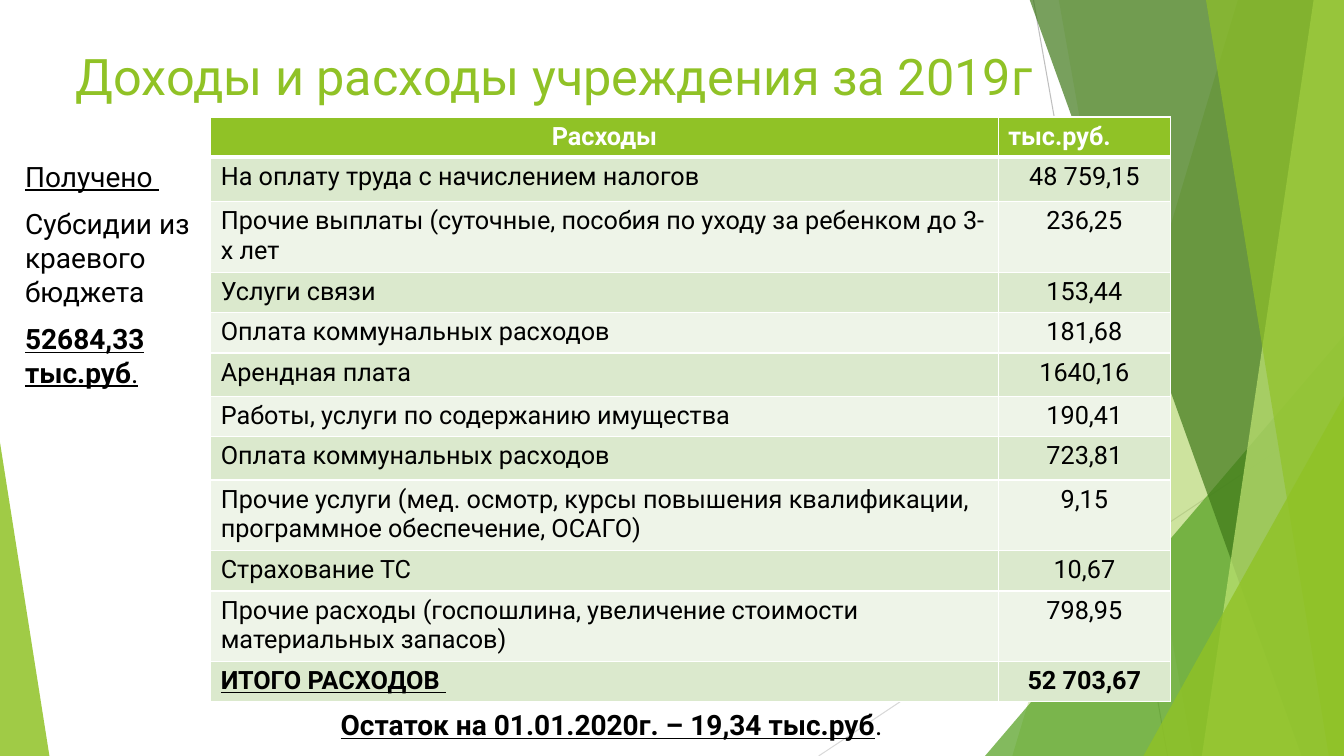
from lxml import etree
from pptx import Presentation
from pptx.dml.color import RGBColor
from pptx.enum.shapes import MSO_CONNECTOR, MSO_SHAPE
from pptx.enum.text import PP_ALIGN
from pptx.oxml import parse_xml
from pptx.oxml.ns import nsdecls, qn
from pptx.util import Inches, Pt

GREEN = "90C226"


def rgb(color):
    return RGBColor.from_string(color)


def add_text(p, text, size=20, color="000000", bold=False, underline=False,
             align=PP_ALIGN.LEFT):
    p.alignment = align
    r = p.add_run()
    r.text = text
    r.font.name = "Roboto"
    r.font.size = Pt(size)
    r.font.color.rgb = rgb(color)
    r.font.bold = bold
    r.font.underline = underline


prs = Presentation()
prs.slide_width, prs.slide_height = Inches(13.33), Inches(7.5)
s = prs.slides.add_slide(prs.slide_layouts[6])

# Thin background lines
for x1, y1, x2, y2, color in [(10.25, 0, 11.58, 7.5, "BFBFBF"),
                              (13.33, 4.03, 8.12, 7.5, "D9D9D9")]:
    line = s.shapes.add_connector(MSO_CONNECTOR.STRAIGHT, Inches(x1), Inches(y1),
                                  Inches(x2), Inches(y2))
    line.line.color.rgb = rgb(color)
    line.line.width = Pt(0.75)
    etree.SubElement(line._element.spPr, qn("a:effectLst"))

# Translucent facets: bands give top and bottom x of their left edge,
# triangles give left, top, width, height and apex position
facets = [
    ("band", (12.28, 10.04), GREEN, 30),
    ("band", (10.5, 11.83), GREEN, 20),
    ("triangle", (9.77, 3.33, 3.56, 4.17, 1), "54A021", 72),
    ("band", (10.21, 12.91), "3F7819", 70),
    ("band", (13.03, 11.92), "C0E474", 70),
    ("band", (11.96, 13.18), GREEN, 65),
    ("triangle", (11.34, 3.93, 1.99, 3.57, 1), GREEN, 80),
    ("triangle", (0, 4.39, 0.49, 3.11, 0), GREEN, 85),
]
for kind, place, color, opacity in facets:
    if kind == "band":
        top_x, bottom_x = place
        outline = s.shapes.build_freeform(Inches(top_x), Inches(-0.01))
        outline.add_line_segments([(Inches(x), Inches(y)) for x, y in
                                   [(13.33, -0.01), (13.33, 7.5), (bottom_x, 7.5)]])
        sp = outline.convert_to_shape()
    else:
        sp = s.shapes.add_shape(MSO_SHAPE.ISOSCELES_TRIANGLE,
                                *[Inches(v) for v in place[:4]])
        sp.adjustments[0] = place[4]
    sp.shadow.inherit = False
    sp.line.fill.background()
    sp.fill.solid()
    sp.fill.fore_color.rgb = rgb(color)
    tint = sp._element.spPr.find(qn("a:solidFill"))[0]
    etree.SubElement(tint, qn("a:alpha"), val=str(opacity * 1000))

# Title, income note and closing balance: place, then runs by paragraph
texts = [
    ((0.65, 0.4, 9.73, 0.86),
     [[("Доходы и расходы учреждения за 2019г", dict(size=36, color=GREEN))]]),
    ((0.15, 1.53, 2.19, 5.08),
     [[("Получено ", dict(underline=True))],
      [("Субсидии из краевого бюджета", {})],
      [("52684,33 тыс.руб", dict(bold=True, underline=True)),
       (".", dict(underline=True))]]),
    ((1.92, 6.97, 8.29, 0.44),
     [[("Остаток на 01.01.2020г. – 19,34 тыс.руб",
        dict(bold=True, underline=True, align=PP_ALIGN.CENTER)),
       (".", dict(align=PP_ALIGN.CENTER))]]),
]
for place, paragraphs in texts:
    tf = s.shapes.add_textbox(*[Inches(v) for v in place]).text_frame
    tf.word_wrap = True
    for i, runs in enumerate(paragraphs):
        p = tf.add_paragraph() if i else tf.paragraphs[0]
        if i:
            p.space_before = Pt(10)
        for text, style in runs:
            add_text(p, text, **style)

# Expense table: name, amount, row height
expenses = [
    ("Расходы", "тыс.руб.", 0.39),
    ("На оплату труда с начислением налогов", "48 759,15", 0.44),
    ("Прочие выплаты (суточные, пособия по уходу за ребенком до 3-х лет", "236,25", 0.69),
    ("Услуги связи", "153,44", 0.4),
    ("Оплата коммунальных расходов", "181,68", 0.4),
    ("Арендная плата", "1640,16", 0.43),
    ("Работы, услуги по содержанию имущества", "190,41", 0.4),
    ("Оплата коммунальных расходов", "723,81", 0.43),
    ("Прочие услуги (мед. осмотр, курсы повышения квалификации, "
     "программное обеспечение, ОСАГО)", "9,15", 0.7),
    ("Страхование ТС", "10,67", 0.4),
    ("Прочие расходы (госпошлина, увеличение стоимости материальных запасов)",
     "798,95", 0.69),
    ("ИТОГО РАСХОДОВ ", "52 703,67", 0.4),
]
last = len(expenses) - 1
table = s.shapes.add_table(len(expenses), 2, Inches(2.09), Inches(1.16), Inches(9.52),
                           Inches(sum(row[2] for row in expenses))).table
table.columns[0].width, table.columns[1].width = Inches(7.81), Inches(1.71)
for i, (name, amount, height) in enumerate(expenses):
    table.rows[i].height = Inches(height)
    for j, text in enumerate((name, amount)):
        cell = table.cell(i, j)
        centred = (i == 0) != (j == 1)
        add_text(cell.text_frame.paragraphs[0], text, size=18,
                 color="000000" if i else "FFFFFF", bold=i in (0, last),
                 underline=i == last and j == 0,
                 align=PP_ALIGN.CENTER if centred else PP_ALIGN.LEFT)
        # White cell borders, thicker under the header
        tcPr = cell._tc.get_or_add_tcPr()
        for side in "LRTB":
            thick = (i, side) in ((0, "B"), (1, "T"))
            tcPr.append(parse_xml(
                f'<a:ln{side} {nsdecls("a")} w="{Pt(3 if thick else 1)}"><a:solidFill>'
                f'<a:srgbClr val="FFFFFF"/></a:solidFill></a:ln{side}>'))
        cell.fill.solid()
        cell.fill.fore_color.rgb = rgb(GREEN if i == 0 else "DBE9CD" if i % 2 else "EEF4E8")

prs.save("out.pptx")
